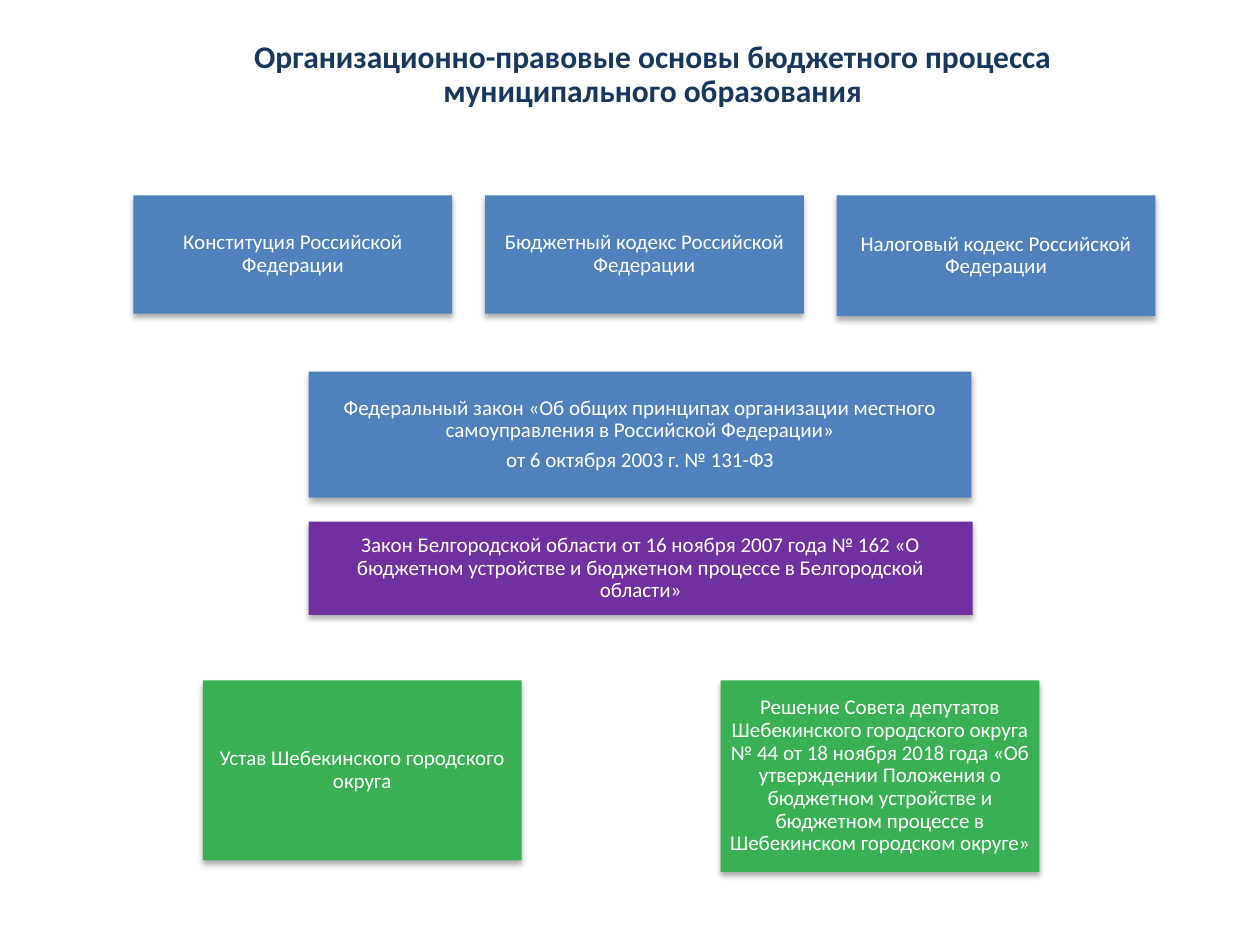
from lxml import etree
from pptx import Presentation
from pptx.dml.color import RGBColor
from pptx.enum.shapes import MSO_SHAPE as Shape
from pptx.enum.text import MSO_ANCHOR as Anchor, PP_ALIGN as Align
from pptx.oxml.ns import qn
from pptx.util import Inches, Pt

COLORS = {
    "title": "17375E",
    "federal": "4F81BD",
    "regional": "7030A0",
    "local": "39B153",
    "text": "FFFFFF",
    "shadow": "000000",
}
FONT = "Calibri"
CARD_WIDTH = 2.53


def rgb(name):
    return RGBColor.from_string(COLORS[name])


class SlideBuilder:
    """Holds the common text style and the slide being filled."""

    def __init__(self, slide):
        self.slide = slide

    def fill_text(self, frame, paragraphs, size, color, bold=False, space_after=0):
        frame.word_wrap = True
        frame.vertical_anchor = Anchor.MIDDLE
        for index, text in enumerate(paragraphs):
            paragraph = frame.add_paragraph() if index else frame.paragraphs[0]
            paragraph.text = text
            paragraph.alignment = Align.CENTER
            paragraph.line_spacing = 0.9
            paragraph.space_after = Pt(space_after)
            paragraph.font.name = FONT
            paragraph.font.size = Pt(size)
            paragraph.font.bold = bold
            paragraph.font.color.rgb = rgb(color)

    def title(self, text, left, top, width, height):
        box = self.slide.shapes.add_textbox(
            Inches(left), Inches(top), Inches(width), Inches(height))
        box.text_frame.margin_left = Inches(0.23)
        self.fill_text(box.text_frame, [text], 18, "title", bold=True)

    def card(self, paragraphs, color, left, top, width, height):
        shape = self.slide.shapes.add_shape(
            Shape.RECTANGLE, Inches(left), Inches(top), Inches(width), Inches(height))
        shape.fill.solid()
        shape.fill.fore_color.rgb = rgb(color)
        shape.line.fill.background()
        self.shadow(shape)
        frame = shape.text_frame
        frame.margin_left = frame.margin_right = Inches(0.05)
        frame.margin_top = frame.margin_bottom = Inches(0.05)
        self.fill_text(frame, paragraphs, 12, "text", space_after=4.2)

    def shadow(self, shape):
        """Give the shape a soft shadow straight below it."""
        shape.shadow.inherit = False
        effects = shape._element.spPr.find(qn("a:effectLst"))
        outer = etree.SubElement(
            effects, qn("a:outerShdw"), blurRad=str(Pt(3.5)), dist=str(Pt(2.2)),
            dir="5400000", rotWithShape="0")
        color = etree.SubElement(outer, qn("a:srgbClr"), val=COLORS["shadow"])
        etree.SubElement(color, qn("a:alpha"), val="32000")


def main():
    presentation = Presentation()
    presentation.slide_width = Inches(10)
    presentation.slide_height = Inches(7.5)
    builder = SlideBuilder(presentation.slides.add_slide(presentation.slide_layouts[6]))

    builder.title(
        "Организационно-правовые основы бюджетного процесса\vмуниципального образования",
        0.98, 0.16, 8.27, 0.88)

    codes = [
        ("Конституция Российской Федерации", 0.94),
        ("Бюджетный кодекс Российской Федерации", 0.94),
        ("Налоговый кодекс Российской Федерации", 0.96),
    ]
    for column, (text, height) in enumerate(codes):
        builder.card([text], "federal", 1.06 + 2.79 * column, 1.55, CARD_WIDTH, height)

    builder.card(
        ["Федеральный закон «Об общих принципах организации местного "
         "самоуправления в Российской Федерации»",
         "от 6 октября 2003 г. № 131-ФЗ"],
        "federal", 2.45, 2.95, 5.26, 1)
    builder.card(
        ["Закон Белгородской области от 16 ноября 2007 года № 162 «О бюджетном "
         "устройстве и бюджетном процессе в Белгородской области»"],
        "regional", 2.45, 4.14, 5.27, 0.74)

    builder.card(["Устав Шебекинского городского округа"],
                 "local", 1.61, 5.4, CARD_WIDTH, 1.43)
    builder.card(
        ["Решение Совета депутатов Шебекинского городского округа № 44 от "
         "18 ноября 2018 года «Об утверждении Положения о бюджетном устройстве и "
         "бюджетном процессе в Шебекинском городском округе»"],
        "local", 5.72, 5.4, CARD_WIDTH, 1.52)

    presentation.save("out.pptx")


if __name__ == "__main__":
    main()
